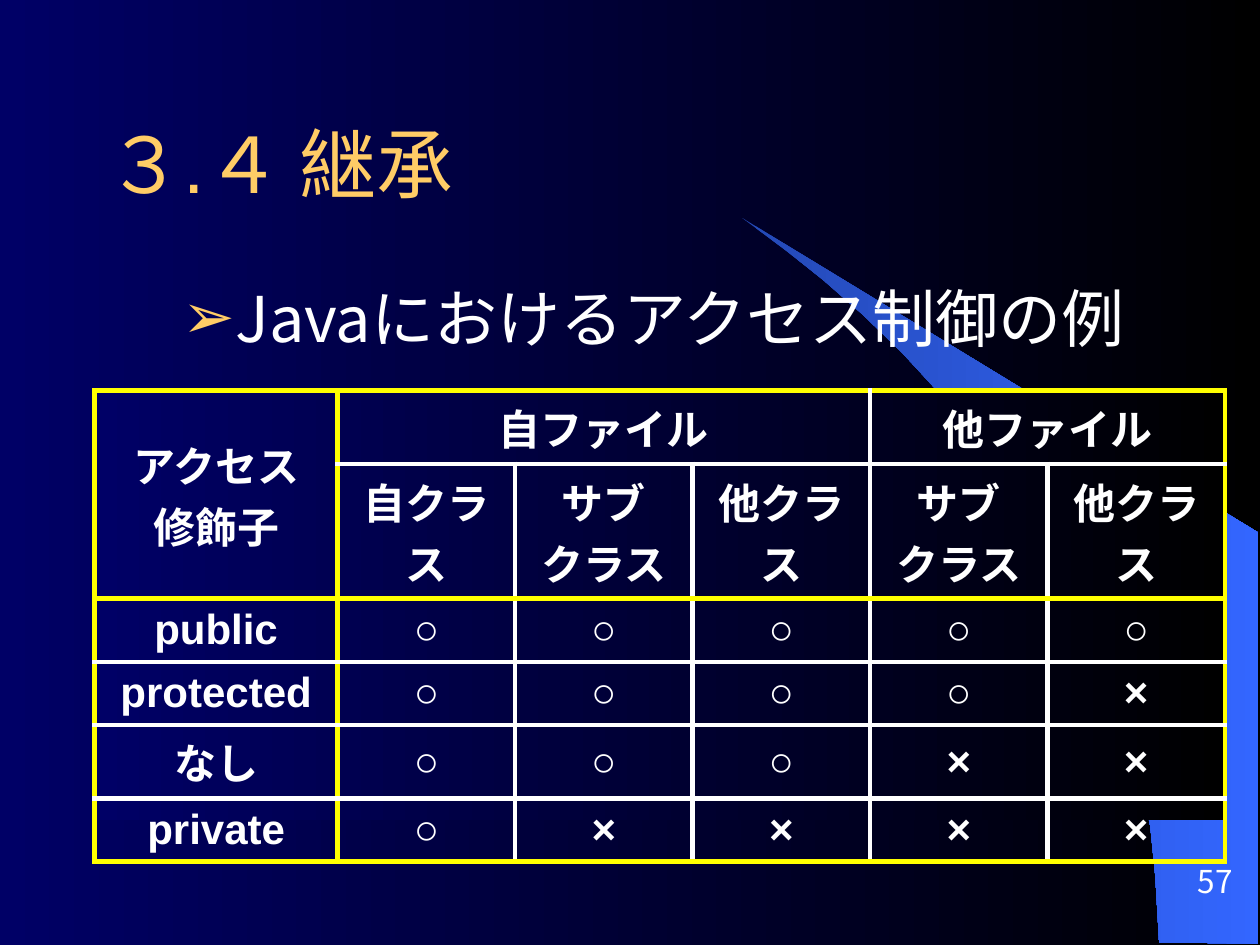
import pptx
import pptx.dml.color
import pptx.enum.text
import pptx.oxml
import pptx.oxml.ns
import pptx.util
from lxml import etree

Pt = pptx.util.Pt
RGBColor = pptx.dml.color.RGBColor
ALIGN = pptx.enum.text.PP_ALIGN
ANCHOR = pptx.enum.text.MSO_ANCHOR
qn = pptx.oxml.ns.qn

NAVY = RGBColor(0x00, 0x00, 0x66)
BLACK = RGBColor(0x00, 0x00, 0x00)
DEEP_BLUE = RGBColor(0x24, 0x49, 0xB6)
BLUE = RGBColor(0x33, 0x66, 0xFF)
GOLD = RGBColor(0xFF, 0xCC, 0x66)
WHITE = RGBColor(0xFF, 0xFF, 0xFF)
YELLOW = RGBColor(0xFF, 0xFF, 0x00)
JAPANESE_FONT = "Noto Sans CJK JP"


def fill_gradient(fill, start, end):
    fill.gradient()
    fill.gradient_angle = 0
    for stop, color in zip(fill.gradient_stops, (start, end)):
        stop.color.rgb = color


def add_run(paragraph, text, size, color, latin, bold=False):
    run = paragraph.add_run()
    run.text = text
    run.font.size = Pt(size)
    run.font.bold = bold
    run.font.color.rgb = color
    run.font.name = latin
    east_asian = etree.SubElement(run.font._element, qn("a:ea"))
    east_asian.set("typeface", JAPANESE_FONT)


deck = pptx.Presentation()
deck.slide_width, deck.slide_height = Pt(720), Pt(540)
slide = deck.slides.add_slide(deck.slide_layouts[6])
fill_gradient(slide.background.fill, NAVY, BLACK)

# Sweeping blade behind the content
blade_points = [
    (9.2, 7.48), (9.99, 7.49), (9.99, 4.23), (5.89, 1.73), (6.24, 1.99),
    (6.53, 2.22), (6.85, 2.5), (7.16, 2.8), (7.62, 3.3), (8.03, 3.84),
    (8.32, 4.31), (8.58, 4.79), (8.78, 5.28), (8.93, 5.72), (9.03, 6.09),
    (9.13, 6.56), (9.17, 6.96),
]
outline = [(Pt(x * 72), Pt(y * 72)) for x, y in blade_points]
builder = slide.shapes.build_freeform(*outline[0])
builder.add_line_segments(outline[1:], close=True)
blade = builder.convert_to_shape()
fill_gradient(blade.fill, DEEP_BLUE, BLUE)

# Panel behind the table
panel = slide.shapes.add_shape(1, Pt(54), Pt(224.6), Pt(646.5), Pt(244))
fill_gradient(panel.fill, NAVY, BLACK)

for shape in (blade, panel):
    shape.line.fill.background()
    shape.shadow.inherit = False

# Title
title = slide.shapes.add_textbox(Pt(54), Pt(48), Pt(636.5), Pt(90)).text_frame
title.word_wrap = True
title.vertical_anchor = ANCHOR.MIDDLE
add_run(title.paragraphs[0], "３.４ 継承", 44, GOLD, "Arial")

# Bulleted topic
topic = slide.shapes.add_textbox(Pt(54), Pt(156), Pt(612), Pt(52)).text_frame
topic.word_wrap = True
topic.margin_left = topic.margin_right = Pt(14.4)
topic_line = topic.paragraphs[0]
topic_line.space_before = Pt(7.2)
topic_format = topic_line._p.get_or_add_pPr()
topic_format.set("marL", str(Pt(58.5)))
topic_format.set("indent", str(Pt(-22.5)))
bullet_color = etree.SubElement(topic_format, qn("a:buClr"))
etree.SubElement(bullet_color, qn("a:srgbClr")).set("val", str(GOLD))
etree.SubElement(topic_format, qn("a:buFont")).set("typeface", "Arial")
etree.SubElement(topic_format, qn("a:buChar")).set("char", "➢")
add_run(topic_line, "Javaにおけるアクセス制御の例", 36, WHITE, JAPANESE_FONT)

# Page number
page = slide.shapes.add_textbox(Pt(638), Pt(484), Pt(73.5), Pt(30)).text_frame
page.word_wrap = False
page.vertical_anchor = ANCHOR.BOTTOM
page.margin_top = page.margin_bottom = 0
page.paragraphs[0].alignment = ALIGN.RIGHT
add_run(page.paragraphs[0], "57", 18, WHITE, JAPANESE_FONT)

# Access control table
access_rows = [
    ["アクセス\n修飾子", "自ファイル", "", "", "他ファイル", ""],
    ["", "自クラス", "サブ\nクラス", "他クラス", "サブ\nクラス", "他クラス"],
    ["public", *"○○○○○"],
    ["protected", *"○○○○×"],
    ["なし", *"○○○××"],
    ["private", *"○××××"],
]
column_widths = [139] + [101.4] * 5
row_heights = [42, 77, 35, 35, 42, 35]
access = slide.shapes.add_table(
    6, 6, Pt(54), Pt(223.2), Pt(sum(column_widths)), Pt(sum(row_heights))
).table
access.first_row = access.horz_banding = False
for column, width in zip(access.columns, column_widths):
    column.width = Pt(width)
for row, height in zip(access.rows, row_heights):
    row.height = Pt(height)

access.cell(0, 0).merge(access.cell(1, 0))
access.cell(0, 1).merge(access.cell(0, 3))
access.cell(0, 4).merge(access.cell(0, 5))

# Yellow rules frame the table and set off its headings
yellow_verticals = {0, 1, 6}
yellow_horizontals = {0, 2, 6}
for r, texts in enumerate(access_rows):
    for c, text in enumerate(texts):
        cell = access.cell(r, c)
        if cell.is_spanned:
            continue
        cell.vertical_anchor = ANCHOR.MIDDLE
        paragraph = cell.text_frame.paragraphs[0]
        paragraph.alignment = ALIGN.CENTER
        for i, line in enumerate(text.split("\n")):
            if i:
                paragraph.add_line_break()
            add_run(paragraph, line, 24, WHITE, "Arial", bold=True)

        right = c + (cell.span_width if cell.is_merge_origin else 1)
        bottom = r + (cell.span_height if cell.is_merge_origin else 1)
        borders = [
            ("a:lnL", c in yellow_verticals),
            ("a:lnR", right in yellow_verticals),
            ("a:lnT", r in yellow_horizontals),
            ("a:lnB", bottom in yellow_horizontals),
        ]
        cell_format = cell._tc.get_or_add_tcPr()
        for tag, is_yellow in borders:
            border = etree.SubElement(cell_format, qn(tag), w=str(Pt(3)))
            solid = etree.SubElement(border, qn("a:solidFill"))
            color = YELLOW if is_yellow else WHITE
            etree.SubElement(solid, qn("a:srgbClr"), val=str(color))
        cell.fill.background()

deck.save("out.pptx")
